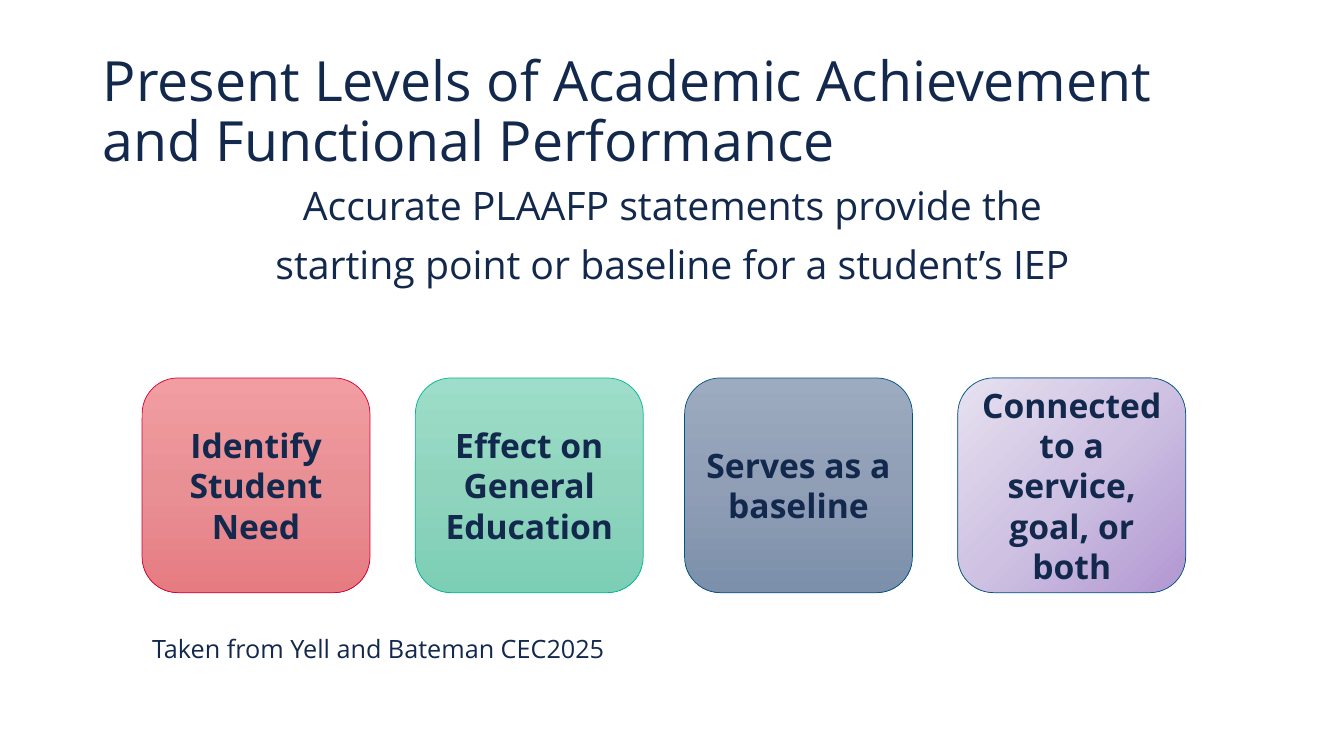
from dataclasses import dataclass

from lxml import etree
from pptx import Presentation
from pptx import util as u
from pptx.dml import color
from pptx.enum import shapes, text
from pptx.oxml import ns


@dataclass(frozen=True)
class Theme:
    font: str = "Open Sans"
    ink: str = "12284C"
    title_size: float = 39.6
    body_size: float = 28
    card_size: float = 24
    source_size: float = 18
    card_line: float = 0.5


@dataclass(frozen=True)
class Box:
    left: float
    top: float
    width: float
    height: float

    def lengths(self) -> list[u.Length]:
        return [u.Inches(n) for n in (self.left, self.top, self.width, self.height)]


@dataclass(frozen=True)
class Card:
    label: str
    left: float
    gradient: tuple[str, str, str]
    line: str
    angle: int = 90


THEME = Theme()
CARD_TOP, CARD_WIDTH, CARD_HEIGHT = 3.75, 2.26, 2.13
CARDS = [
    Card("Identify Student Need", 1.41, ("F19DA1", "E99095", "E67C82"), "D50032"),
    Card("Effect on General Education", 4.12, ("9DDDC9", "90D4BE", "7CCEB5"), "00B796"),
    Card("Serves as a baseline", 6.79, ("9DABC0", "909FB6", "7C8FAB"), "005587"),
    Card("Connected to a service, goal, or both", 9.5,
         ("B197D2", "CEC1E2", "E7E1F0"), "005587", 225),
]


def add_run(paragraph, words: str, size: float, bold: bool = False) -> None:
    run = paragraph.add_run()
    run.text = words
    run.font.name = THEME.font
    run.font.size = u.Pt(size)
    run.font.bold = bold
    run.font.color.rgb = color.RGBColor.from_string(THEME.ink)


def add_text_frame(slide, box: Box, anchor=text.MSO_ANCHOR.TOP):
    frame = slide.shapes.add_textbox(*box.lengths()).text_frame
    frame.word_wrap = True
    frame.vertical_anchor = anchor
    return frame


def fill_gradient(shape, colours: tuple[str, ...], angle: int) -> None:
    """Spread the colours evenly; the angle runs clockwise in degrees."""
    shape.fill.gradient()
    gradient = shape.fill._xPr.find(ns.qn("a:gradFill"))
    stops = gradient.find(ns.qn("a:gsLst"))
    for stop in list(stops):
        stops.remove(stop)
    for index, colour in enumerate(colours):
        position = index * 100000 // (len(colours) - 1)
        stop = etree.SubElement(stops, ns.qn("a:gs"), pos=str(position))
        etree.SubElement(stop, ns.qn("a:srgbClr"), val=colour)
    gradient.find(ns.qn("a:lin")).set("ang", str(angle * 60000))


def add_title(slide, lines: list[str]) -> None:
    frame = add_text_frame(slide, Box(0.92, 0.4, 11.5, 1.45), text.MSO_ANCHOR.MIDDLE)
    paragraph = frame.paragraphs[0]
    paragraph.line_spacing = 0.9
    for index, line in enumerate(lines):
        if index:
            paragraph.add_line_break()
        add_run(paragraph, line, THEME.title_size)


def add_statement(slide, lines: list[str]) -> None:
    frame = add_text_frame(slide, Box(0.92, 1.8, 11.5, 4.96))
    for index, line in enumerate(lines):
        paragraph = frame.add_paragraph() if index else frame.paragraphs[0]
        paragraph.alignment = text.PP_ALIGN.CENTER
        paragraph.line_spacing = 0.9
        paragraph.space_before = u.Pt(6 if index else 0)
        paragraph.space_after = u.Pt(6)
        add_run(paragraph, line, THEME.body_size)


def add_card(slide, card: Card) -> None:
    box = Box(card.left, CARD_TOP, CARD_WIDTH, CARD_HEIGHT)
    shape = slide.shapes.add_shape(shapes.MSO_SHAPE.ROUNDED_RECTANGLE, *box.lengths())
    shape.shadow.inherit = False
    fill_gradient(shape, card.gradient, card.angle)
    shape.line.color.rgb = color.RGBColor.from_string(card.line)
    shape.line.width = u.Pt(THEME.card_line)
    frame = shape.text_frame
    frame.word_wrap = True
    frame.vertical_anchor = text.MSO_ANCHOR.MIDDLE
    paragraph = frame.paragraphs[0]
    paragraph.alignment = text.PP_ALIGN.CENTER
    add_run(paragraph, card.label, THEME.card_size, bold=True)


def add_source(slide, words: str) -> None:
    frame = add_text_frame(slide, Box(1.41, 6.23, 6.67, 0.4))
    frame.auto_size = text.MSO_AUTO_SIZE.SHAPE_TO_FIT_TEXT
    add_run(frame.paragraphs[0], words, THEME.source_size)


def main() -> None:
    presentation = Presentation()
    presentation.slide_width = u.Inches(13.33)
    presentation.slide_height = u.Inches(7.5)
    slide = presentation.slides.add_slide(presentation.slide_layouts[6])

    # Heading and statement
    add_statement(slide, ["Accurate PLAAFP statements provide the",
                          "starting point or baseline for a student’s IEP"])
    add_title(slide, ["Present Levels of Academic Achievement",
                      "and Functional Performance"])

    # Row of cards
    for card in CARDS:
        add_card(slide, card)

    # Source line
    add_source(slide, "Taken from Yell and Bateman CEC2025")
    presentation.save("out.pptx")


if __name__ == "__main__":
    main()
